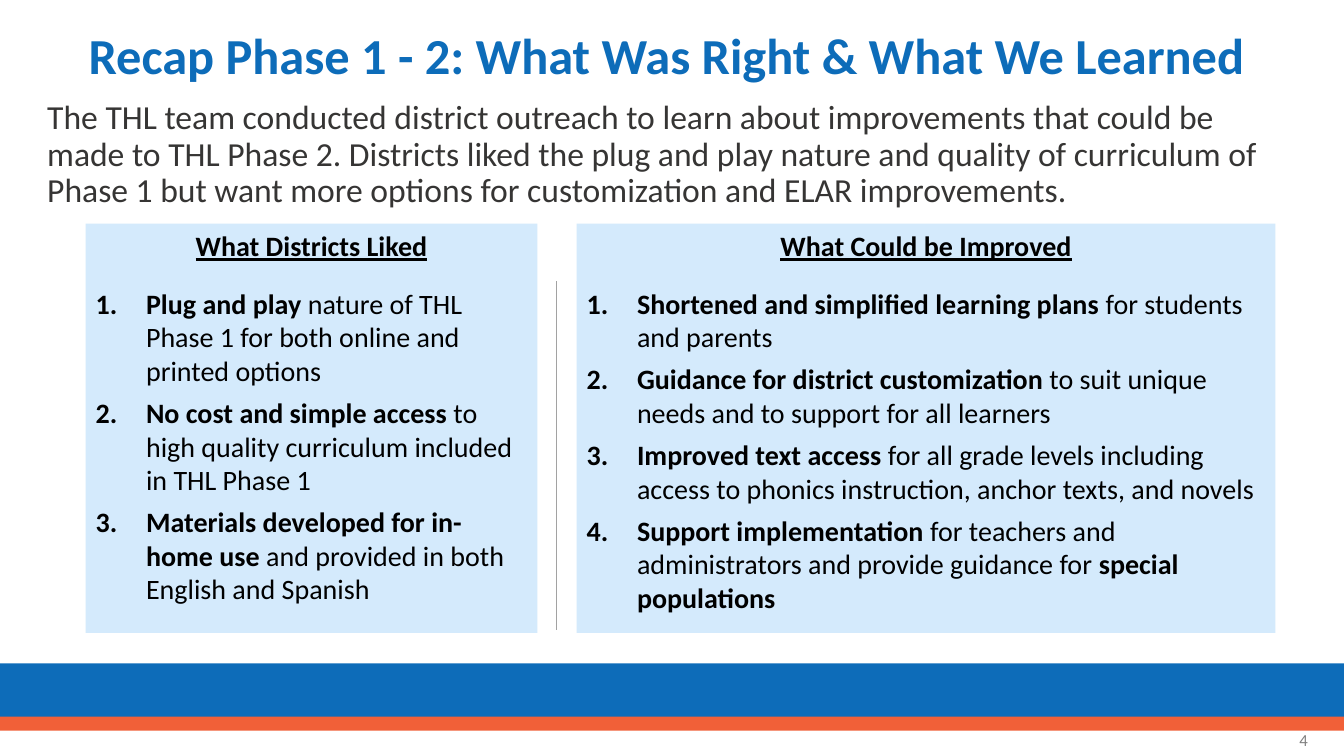
from lxml.etree import SubElement as add_element
from pptx import Presentation
from pptx.dml.color import RGBColor
from pptx.enum.shapes import MSO_CONNECTOR as Connector, MSO_SHAPE as Shape
from pptx.enum.text import MSO_ANCHOR as Anchor, PP_ALIGN as Align
from pptx.oxml.ns import qn
from pptx.util import Inches, Pt


def color(value):
    """Turn a hex string into a colour."""
    return RGBColor.from_string(value)


class SlideBuilder:
    """Hold the style and the current slide."""

    font = "Calibri"
    blue = "0D6CB9"
    orange = "F16038"
    pale = "D4EAFC"
    black = "000000"
    dark = "363534"
    gray = "808080"
    rule = "A2A2A2"

    def __init__(self, page):
        """Start on the given slide."""
        self.page = page

    def style(self, para, size, fill, bold=None):
        """Set the font of a paragraph."""
        para.font.name = self.font
        para.font.size = Pt(size)
        para.font.color.rgb = color(fill)
        para.font.bold = bold

    def rectangle(self, left, top, width, height, fill):
        """Add a plain filled rectangle."""
        box = self.page.shapes.add_shape(
            Shape.RECTANGLE, Inches(left), Inches(top), Inches(width), Inches(height))
        box.shadow.inherit = False
        box.fill.solid()
        box.fill.fore_color.rgb = color(fill)
        box.line.fill.background()
        return box

    def text(self, left, top, width, height, words, size, fill,
             bold=False, anchor=Anchor.TOP, align=Align.LEFT, spacing=1.0):
        """Add a text box with one paragraph."""
        box = self.page.shapes.add_textbox(
            Inches(left), Inches(top), Inches(width), Inches(height))
        frame = box.text_frame
        frame.word_wrap = True
        frame.vertical_anchor = anchor
        para = frame.paragraphs[0]
        para.text = words
        para.alignment = align
        para.line_spacing = spacing
        self.style(para, size, fill, bold)

    def panel(self, left, width, heading, items):
        """Add a panel with a heading and a numbered list."""
        frame = self.rectangle(left, 2.22, width, 4.06, self.pale).text_frame
        frame.word_wrap = True
        frame.vertical_anchor = Anchor.TOP
        title = frame.paragraphs[0]
        title.text = heading
        title.alignment = Align.CENTER
        title.space_after = Pt(17)
        self.style(title, 20, self.black, True)
        title.font.underline = True
        for item in items:
            self.numbered(frame.add_paragraph(), item)

    def numbered(self, para, parts):
        """Fill a numbered paragraph whose parts alternate bold and regular."""
        para.alignment = Align.LEFT
        para.space_after = Pt(6)
        properties = para._p.get_or_add_pPr()
        properties.set("marL", str(Inches(0.5)))
        properties.set("indent", str(Inches(-0.5)))
        add_element(properties, qn("a:buFont"), typeface=self.font)
        add_element(properties, qn("a:buAutoNum"), type="arabicPeriod")
        self.style(para, 20, self.black)
        for index, words in enumerate(parts):
            span = para.add_run()
            span.text = words
            span.font.bold = index % 2 == 0

    def divider(self, x, top, bottom):
        """Add a thin vertical line."""
        line = self.page.shapes.add_connector(
            Connector.STRAIGHT, Inches(x), Inches(top), Inches(x), Inches(bottom))
        line.line.color.rgb = color(self.rule)
        line.line.width = Pt(0.5)
        add_element(line._element.spPr, qn("a:effectLst"))


LIKED = [
    ("Plug and play ", "nature of THL Phase 1 for both online and printed options"),
    ("No cost and simple access ",
     "to high quality curriculum included in THL Phase 1"),
    ("Materials developed for in-home use",
     " and provided in both English and Spanish"),
]
IMPROVED = [
    ("Shortened and simplified learning plans ", "for students and parents"),
    ("Guidance for district customization ",
     "to suit unique needs and to support for all learners"),
    ("Improved text access ",
     "for all grade levels including access to phonics instruction, "
     "anchor texts, and novels"),
    ("Support implementation",
     " for teachers and administrators and provide guidance for ",
     "special populations"),
]
INTRO = (
    "The THL team conducted district outreach to learn about improvements that "
    "could be made to THL Phase 2. Districts liked the plug and play nature and "
    "quality of curriculum of Phase 1 but want more options for customization "
    "and ELAR improvements."
)


def main():
    """Build the slide and save it."""
    deck = Presentation()
    deck.slide_width = Inches(13.33)
    deck.slide_height = Inches(7.5)
    slide = SlideBuilder(deck.slides.add_slide(deck.slide_layouts[6]))
    slide.rectangle(0, 6.58, 13.33, 0.58, slide.blue)
    slide.rectangle(0, 7.11, 13.33, 0.14, slide.orange)
    slide.text(0.78, 0.17, 13.29, 0.82,
               "Recap Phase 1 - 2: What Was Right & What We Learned",
               36, slide.blue, bold=True, anchor=Anchor.MIDDLE, spacing=0.9)
    slide.text(0.37, 0.95, 12.57, 1.03, INTRO, 24, slide.dark, spacing=0.9)
    slide.panel(0.85, 4.48, "What Districts Liked", LIKED)
    slide.panel(5.72, 6.93, "What Could be Improved", IMPROVED)
    slide.divider(5.52, 2.79, 6.25)
    slide.text(10.07, 7.14, 3, 0.4, "4", 12, slide.gray,
               anchor=Anchor.MIDDLE, align=Align.RIGHT)
    deck.save("out.pptx")


if __name__ == "__main__":
    main()
